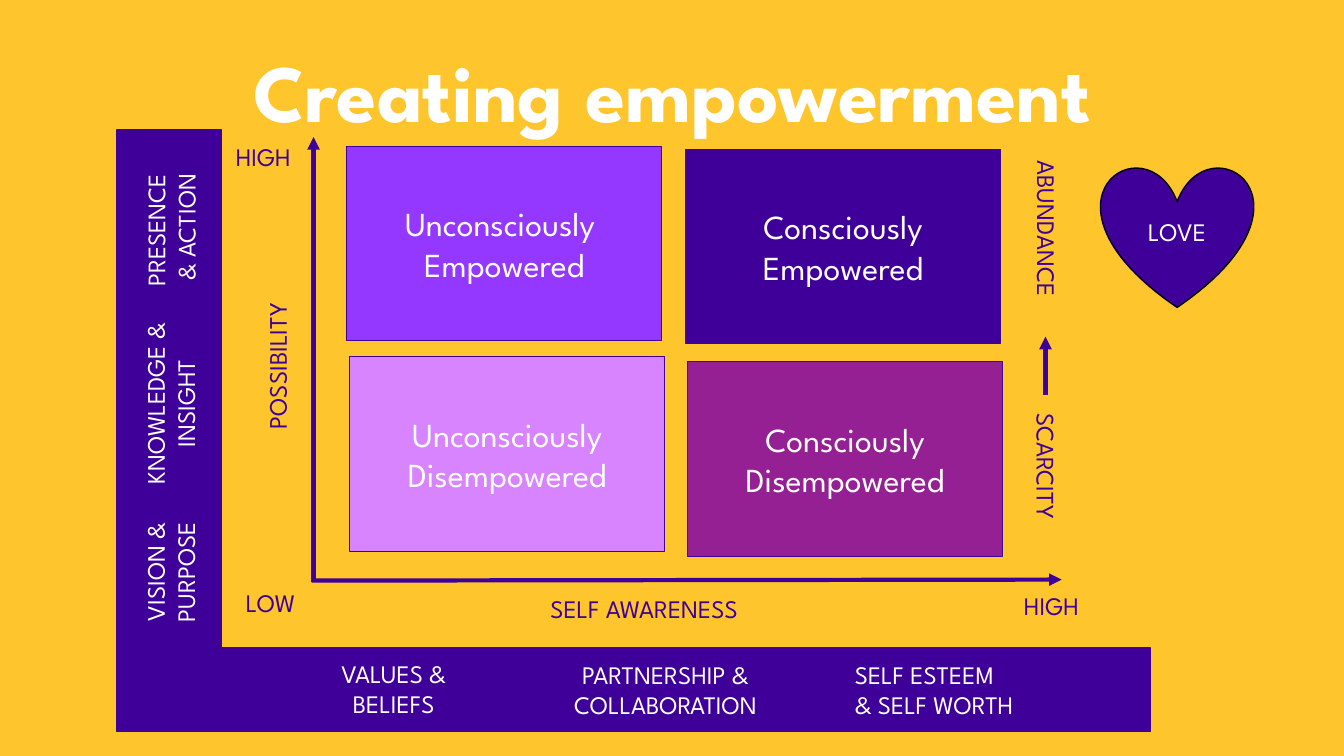
from pptx import Presentation
from pptx.dml.color import RGBColor
from pptx.enum.shapes import MSO_CONNECTOR, MSO_SHAPE
from pptx.enum.text import MSO_ANCHOR, MSO_AUTO_SIZE, PP_ALIGN
from pptx.oxml.ns import qn
from pptx.util import Emu, Pt
from lxml.etree import SubElement

COLOURS = {
    "gold": "FEC52C",
    "indigo": "3E0099",
    "violet": "9437FF",
    "lilac": "D883FF",
    "plum": "942093",
    "white": "FFFFFF",
    "black": "000000",
}
LEFT, CENTRE, RIGHT = PP_ALIGN.LEFT, PP_ALIGN.CENTER, PP_ALIGN.RIGHT


def px(length):
    """100 px to the inch."""
    return Emu(length * 9144)


def colour(name):
    return RGBColor.from_string(COLOURS[name])


class Board:
    font = "League Spartan"

    def __init__(self, deck):
        self.slide = deck.slides.add_slide(deck.slide_layouts[5])
        background = self.slide.background.fill
        background.solid()
        background.fore_color.rgb = colour("gold")

    def set_text(self, frame, text, size, ink, align, bold=False):
        frame.text = text
        for paragraph in frame.paragraphs:
            paragraph.alignment = align
            paragraph.font.name = self.font
            paragraph.font.size = Pt(size)
            paragraph.font.bold = bold
            paragraph.font.color.rgb = colour(ink)

    def title(self, text, left, top, width, height):
        heading = self.slide.shapes.title
        heading.left, heading.top = px(left), px(top)
        heading.width, heading.height = px(width), px(height)
        frame = heading.text_frame
        frame.auto_size = MSO_AUTO_SIZE.NONE
        frame.vertical_anchor = MSO_ANCHOR.TOP
        self.set_text(frame, text, 58, "white", CENTRE, bold=True)

    def block(self, left, top, width, height, fill, text="", size=24,
              outline="indigo", weight=1, kind=MSO_SHAPE.RECTANGLE, wrap=True):
        block = self.slide.shapes.add_shape(
            kind, px(left), px(top), px(width), px(height))
        block.shadow.inherit = False
        block.fill.solid()
        block.fill.fore_color.rgb = colour(fill)
        block.line.color.rgb = colour(outline)
        block.line.width = Pt(weight)
        if text:
            block.text_frame.word_wrap = wrap
            self.set_text(block.text_frame, text, size, "white", CENTRE)

    def label(self, text, left, top, width, height=40, ink="indigo",
              align=LEFT, turn=0):
        label = self.slide.shapes.add_textbox(
            px(left), px(top), px(width), px(height))
        label.rotation = turn
        label.text_frame.word_wrap = True
        self.set_text(label.text_frame, text, 18, ink, align)

    def arrow(self, start_x, start_y, tip_x, tip_y):
        arrow = self.slide.shapes.add_connector(
            MSO_CONNECTOR.STRAIGHT,
            px(start_x), px(start_y), px(tip_x), px(tip_y))
        arrow.line.color.rgb = colour("indigo")
        arrow.line.width = Pt(3)
        properties = arrow._element.spPr
        SubElement(properties.find(qn("a:ln")), qn("a:tailEnd"), type="triangle")
        SubElement(properties, qn("a:effectLst"))


def main():
    deck = Presentation()
    deck.slide_width, deck.slide_height = px(1333), px(750)
    board = Board(deck)
    board.title("Creating empowerment", 0, 36, 1333, 108)

    # Quadrants
    for left, top, fill, state in (
        (344, 145, "violet", "Unconsciously \nEmpowered"),
        (680, 148, "indigo", "Consciously Empowered"),
        (347, 354, "lilac", "Unconsciously Disempowered"),
        (682, 359, "plum", "Consciously Disempowered"),
    ):
        board.block(left, top, 312, 193, fill, state, weight=0.75)

    # Axes and the rise from scarcity to abundance
    board.arrow(311, 577, 311, 136)
    board.arrow(309, 576, 1053, 575)
    board.arrow(1037, 392, 1037, 334)
    board.label("POSSIBILITY", 185, 326, 179, turn=270)
    board.label("SELF AWARENESS", 536, 584, 255)
    board.label("HIGH", 224, 135, 86)
    board.label("LOW", 234, 578, 78)
    board.label("HIGH", 994, 581, 86, align=RIGHT)
    board.label("ABUNDANCE", 946, 222, 185, turn=90)
    board.label("SCARCITY", 963, 455, 150, turn=90)

    # Heart
    board.block(1092, 165, 151, 140, "indigo", "LOVE", size=18,
                outline="black", kind=MSO_SHAPE.HEART, wrap=False)

    # Bottom band
    board.block(157, 643, 984, 83, "indigo")
    for text, left, top, width, align in (
        ("VALUES & BELIEFS", 309, 648, 163, CENTRE),
        ("PARTNERSHIP & COLLABORATION", 534, 649, 252, CENTRE),
        ("SELF ESTEEM\n& SELF WORTH", 838, 649, 212, LEFT),
    ):
        board.label(text, left, top, width, 71, "white", align)

    # Side band
    board.block(116, 129, 104, 597, "indigo")
    for text, left, top, width in (
        ("VISION & PURPOSE", 90, 532, 158),
        ("KNOWLEDGE & INSIGHT", 74, 365, 190),
        ("PRESENCE \n& ACTION", 81, 190, 177),
    ):
        board.label(text, left, top, width, 71, "white", CENTRE, turn=270)

    deck.save("out.pptx")


if __name__ == "__main__":
    main()
